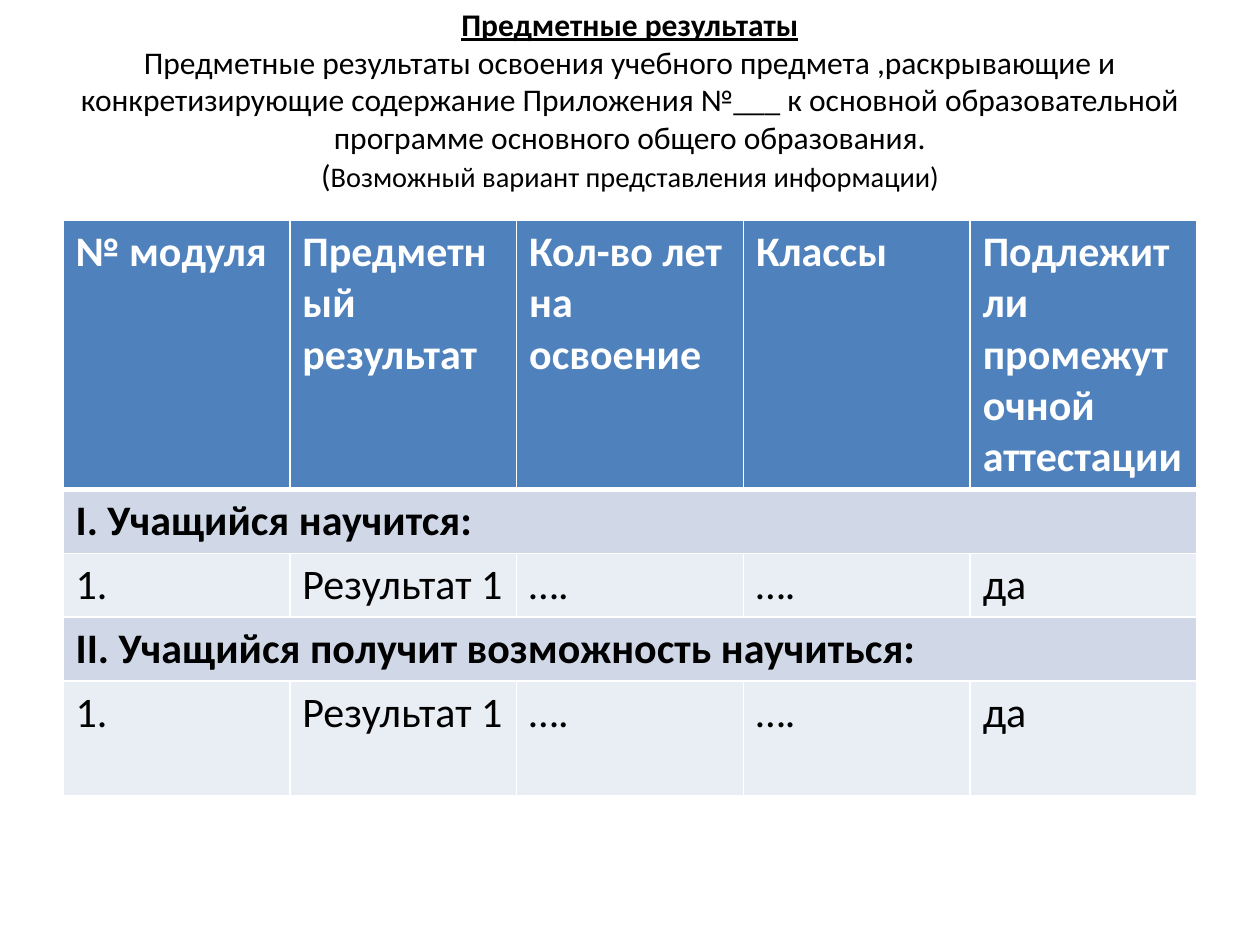
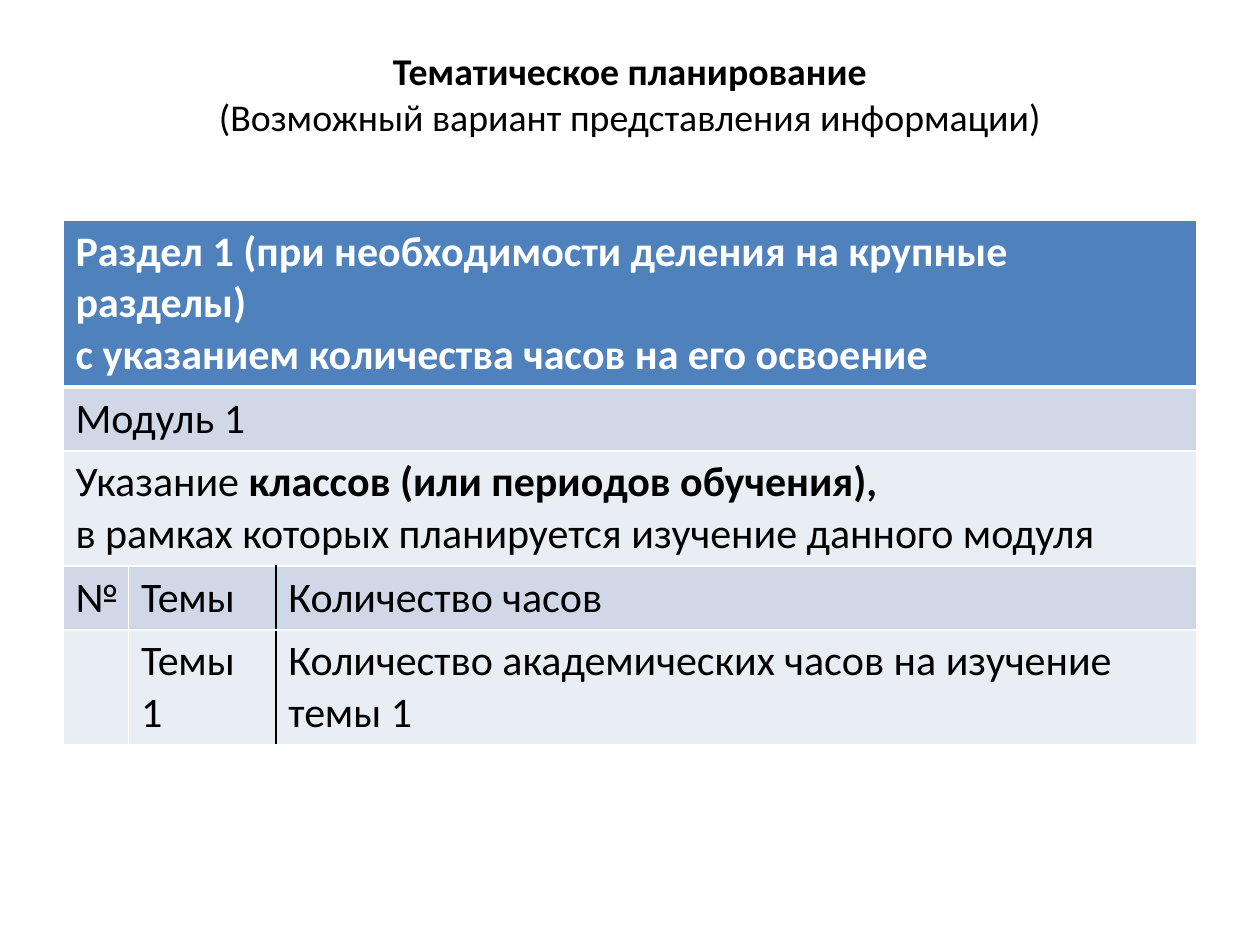
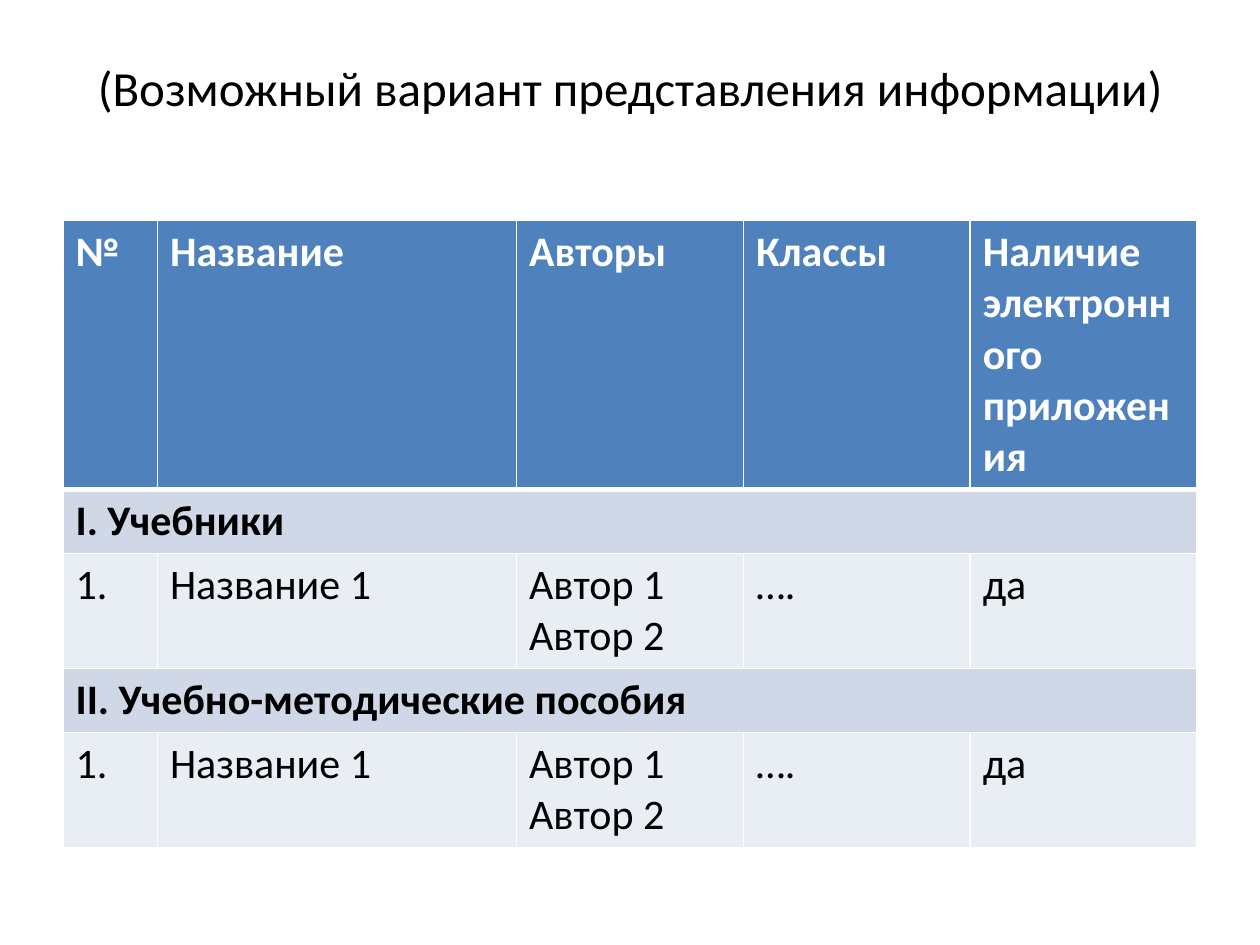
from dataclasses import dataclass
from typing import Any, NamedTuple

from lxml import etree
from pptx import Presentation
from pptx import util as u
from pptx.dml import color
from pptx.enum import text
from pptx.oxml import ns

PX = 9144
FONT = "Calibri"
WHITE, BLACK = "FFFFFF", "000000"
BLUE, DARK, LIGHT = "4F81BD", "D0D8E8", "E9EDF4"
LEFT, WIDE = 50, 900
HEAD_TOP, HEAD_HIGH = 30, 125
GRID_TOP, ROW_HIGH = 175, 41
PAD = 5
LEAD = 1.22
CELL_SIZE = 24
HINT = "Возможный вариант представления информации)"


class Run(NamedTuple):
    text: str
    size: float
    bold: bool = False
    line: bool = False


@dataclass
class Grid:
    cols: list[int]
    rows: list[list[str]]
    high: int
    last: int = ROW_HIGH
    rule: int | None = None


@dataclass
class Page:
    head: list[list[Run]]
    grid: Grid


def px(count: float) -> int:
    return u.Emu(round(count * PX))


def hue(code: str) -> color.RGBColor:
    return color.RGBColor.from_string(code)


def put(thing: Any, form: dict[str, Any]) -> None:
    for name, value in form.items():
        setattr(thing, name, value)


def add_run(para: Any, run: Run, code: str) -> None:
    part = para.add_run()
    part.text = run.text
    put(part.font, {"name": FONT, "size": u.Pt(run.size), "bold": run.bold,
                    "underline": run.line})
    part.font.color.rgb = hue(code)


def add_head(slide: Any, lines: list[list[Run]]) -> None:
    box = slide.shapes.add_textbox(px(LEFT), px(HEAD_TOP), px(WIDE), px(HEAD_HIGH))
    frame = box.text_frame
    gap = lines[-1][-1].size * LEAD / 72 * 100
    put(frame, {"word_wrap": True, "auto_size": text.MSO_AUTO_SIZE.NONE,
                "vertical_anchor": text.MSO_ANCHOR.MIDDLE,
                "margin_bottom": px(PAD + gap)})
    para = frame.paragraphs[0]
    para.alignment = text.PP_ALIGN.CENTER
    for index, line in enumerate(lines):
        if index:
            para.add_line_break()
        for run in line:
            add_run(para, run, BLACK)


def add_edge(cell: Any, side: str, code: str, width: int) -> None:
    props = cell._tc.get_or_add_tcPr()
    edge = etree.SubElement(props, ns.qn(f"a:ln{side}"), w=str(u.Pt(width)))
    fill = etree.SubElement(edge, ns.qn("a:solidFill"))
    etree.SubElement(fill, ns.qn("a:srgbClr"), val=code)


def fill_cell(cell: Any, words: str, code: str, bold: bool) -> None:
    frame = cell.text_frame
    for index, line in enumerate(words.split("\n")):
        para = frame.add_paragraph() if index else frame.paragraphs[0]
        for turn, piece in enumerate(line.split("*")):
            if piece:
                add_run(para, Run(piece, CELL_SIZE, bold or turn % 2 == 1), code)


def add_grid(slide: Any, grid: Grid) -> None:
    count, width = len(grid.rows), len(grid.cols)
    frame = slide.shapes.add_table(count, width, px(LEFT), px(GRID_TOP),
                                   px(WIDE), px(ROW_HIGH * count))
    table = frame.table
    for col, size in zip(table.columns, grid.cols):
        col.width = px(size)
    table.rows[count - 1].height = px(grid.last)
    frame.height = px(grid.high)
    for r, row in enumerate(grid.rows):
        split = len(row) > 1
        shade = BLUE if r == 0 else DARK if r % 2 else LIGHT
        for c in range(width):
            cell = table.cell(r, c)
            ruled = split and grid.rule is not None
            add_edge(cell, "L", BLACK if ruled and c == grid.rule else WHITE, 1)
            add_edge(cell, "R", BLACK if ruled and c + 1 == grid.rule else WHITE, 1)
            add_edge(cell, "T", WHITE, 3 if r == 1 else 1)
            add_edge(cell, "B", WHITE, 3 if r == 0 else 1)
            cell.fill.solid()
            cell.fill.fore_color.rgb = hue(shade)
        if not split:
            table.cell(r, 0).merge(table.cell(r, width - 1))
        for c, words in enumerate(row):
            fill_cell(table.cell(r, c), words, BLACK if r else WHITE, r == 0)


GOAL = ["1.", "Результат 1", "….", "….", "да"]
BOOK = ["1.", "Название 1", "Автор 1\nАвтор 2", "….", "да"]

PAGES = [
    Page(
        [[Run("Предметные результаты", 18, True, True)],
         [Run("Предметные результаты освоения учебного предмета ,раскрывающие и "
              "конкретизирующие содержание Приложения №___ к основной "
              "образовательной программе основного общего образования.", 18)],
         [Run("(", 18), Run(HINT, 16.2)]],
        Grid([180] * 5,
             [["№ модуля", "Предметный результат", "Кол-во лет\nна освоение",
               "Классы", "Подлежит ли\nпромежуточной\nаттестации"],
              ["*I. Учащийся научится:*"], GOAL,
              ["*II. Учащийся получит возможность научиться:*"], GOAL],
             450, last=91)),
    Page(
        [[Run("Тематическое планирование", 21.6, True)],
         [Run("(" + HINT, 21.6)]],
        Grid([52, 117, 731],
             [["Раздел 1 (при необходимости деления на крупные разделы)\n"
               "с указанием количества часов на его освоение"],
              ["Модуль 1"],
              ["Указание *классов (или периодов обучения),*\n"
               "в рамках которых планируется изучение данного модуля"],
              ["№", "Темы", "Количество часов"],
              ["", "Темы 1", "Количество академических часов на изучение темы 1"]],
             410, rule=2)),
    Page(
        [[Run("(" + HINT, 28)]],
        Grid([75, 285, 180, 180, 180],
             [["№", "Название", "Авторы", "Классы",
               "Наличие\nэлектронного\nприложения"],
              ["*I. Учебники*"], BOOK,
              ["*II. Учебно-методические пособия*"], BOOK],
             490)),
]


def main() -> None:
    deck = Presentation()
    put(deck, {"slide_width": px(1000), "slide_height": px(750)})
    for page in PAGES:
        slide = deck.slides.add_slide(deck.slide_layouts[6])
        add_head(slide, page.head)
        add_grid(slide, page.grid)
    deck.save("out.pptx")


if __name__ == "__main__":
    main()
